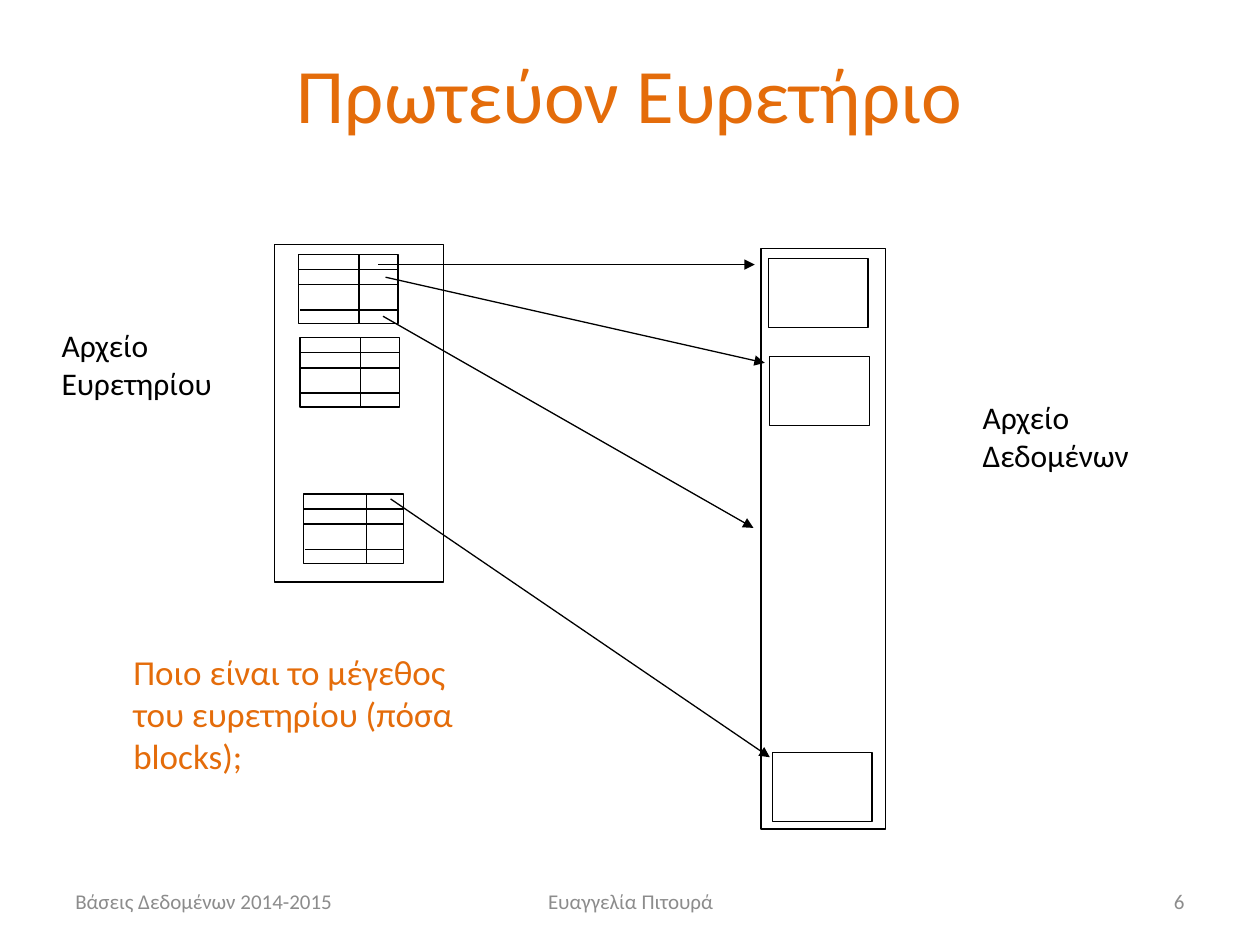
import pptx
import pptx.util
import pptx.dml.color
import pptx.enum.shapes
import pptx.enum.text
import pptx.oxml.ns
import lxml.etree

Inches = pptx.util.Inches
ALIGN = pptx.enum.text.PP_ALIGN
ANCHOR = pptx.enum.text.MSO_ANCHOR
BLACK = pptx.dml.color.RGBColor(0x00, 0x00, 0x00)
ORANGE = pptx.dml.color.RGBColor(0xE4, 0x6C, 0x0A)
GRAY = pptx.dml.color.RGBColor(0x8C, 0x8C, 0x8C)

deck = pptx.Presentation()
deck.slide_width = Inches(10)
deck.slide_height = Inches(7.5)
page = deck.slides.add_slide(deck.slide_layouts[5])


def add_line(x1, y1, x2, y2, arrow=False):
    line = page.shapes.add_connector(
        pptx.enum.shapes.MSO_CONNECTOR.STRAIGHT,
        Inches(x1), Inches(y1), Inches(x2), Inches(y2))
    line.line.color.rgb = BLACK
    line.line.width = pptx.util.Pt(0.75)
    properties = line.line._get_or_add_ln()
    if arrow:
        lxml.etree.SubElement(properties, pptx.oxml.ns.qn("a:tailEnd"), type="triangle")
    lxml.etree.SubElement(properties.getparent(), pptx.oxml.ns.qn("a:effectLst"))


def write_text(box, text, size, color, align, anchor):
    frame = box.text_frame
    frame.text = text
    frame.word_wrap = True
    frame.vertical_anchor = anchor
    para = frame.paragraphs[0]
    para.alignment = align
    span = para.runs[0]
    span.font.name = "Calibri"
    span.font.size = pptx.util.Pt(size)
    span.font.color.rgb = color


title = page.shapes.title
title.left, title.top = Inches(0.5), Inches(0.11)
title.width, title.height = Inches(9), Inches(1.25)
write_text(title, "Πρωτεύον Ευρετήριο", 44, ORANGE, ALIGN.CENTER, ANCHOR.MIDDLE)

BLOCK_WIDTH, BLOCK_HEIGHT = 0.79, 0.55
files = [(2.18, 1.94, 1.34, 2.68), (6.04, 1.97, 0.99, 4.61)]
index_blocks = [(2.37, 2.02, 2.85), (2.38, 2.68, 2.86), (2.41, 3.92, 2.91)]
data_blocks = [(6.1, 2.05), (6.11, 2.83), (6.13, 5.97)]
blocks = [(left, top, BLOCK_WIDTH, BLOCK_HEIGHT)
          for left, top, *divider in index_blocks + data_blocks]

for bounds in files + blocks:
    box = page.shapes.add_shape(
        pptx.enum.shapes.MSO_SHAPE.RECTANGLE, *[Inches(value) for value in bounds])
    box.shadow.inherit = False
    box.fill.background()
    box.line.color.rgb = BLACK
    box.line.width = pptx.util.Pt(0.75)

for left, top, divider in index_blocks:
    for offset, inset in [(0.12, 0), (0.24, 0), (0.44, 0.01)]:
        add_line(left + inset, top + offset, left + BLOCK_WIDTH, top + offset)
    add_line(divider, top, divider, top + BLOCK_HEIGHT)

pointers = [
    (3, 2.1, 5.99, 2.1),
    (3.06, 2.2, 6.07, 2.88),
    (3.04, 2.51, 5.98, 4.19),
    (3.1, 3.96, 6.11, 6.01),
]
for pointer in pointers:
    add_line(*pointer, arrow=True)

texts = [
    ("Αρχείο Ευρετηρίου", 0.39, 2.54, 2.12, 0.7, 18, BLACK, ALIGN.LEFT, ANCHOR.TOP),
    ("Αρχείο Δεδομένων", 7.7, 3.11, 1.64, 0.7, 18, BLACK, ALIGN.LEFT, ANCHOR.TOP),
    ("Ποιο είναι το μέγεθος του ευρετηρίου (πόσα blocks);",
     0.96, 5.11, 2.8, 1.11, 20, ORANGE, ALIGN.LEFT, ANCHOR.TOP),
    ("Βάσεις Δεδομένων 2014-2015", 0.5, 6.95, 2.33, 0.4, 12, GRAY, ALIGN.LEFT, ANCHOR.MIDDLE),
    ("Ευαγγελία Πιτουρά", 3.42, 6.95, 3.17, 0.4, 12, GRAY, ALIGN.CENTER, ANCHOR.MIDDLE),
    ("6", 7.17, 6.95, 2.33, 0.4, 12, GRAY, ALIGN.RIGHT, ANCHOR.MIDDLE),
]
for text, left, top, width, height, size, color, align, anchor in texts:
    box = page.shapes.add_textbox(Inches(left), Inches(top), Inches(width), Inches(height))
    write_text(box, text, size, color, align, anchor)

deck.save("out.pptx")
